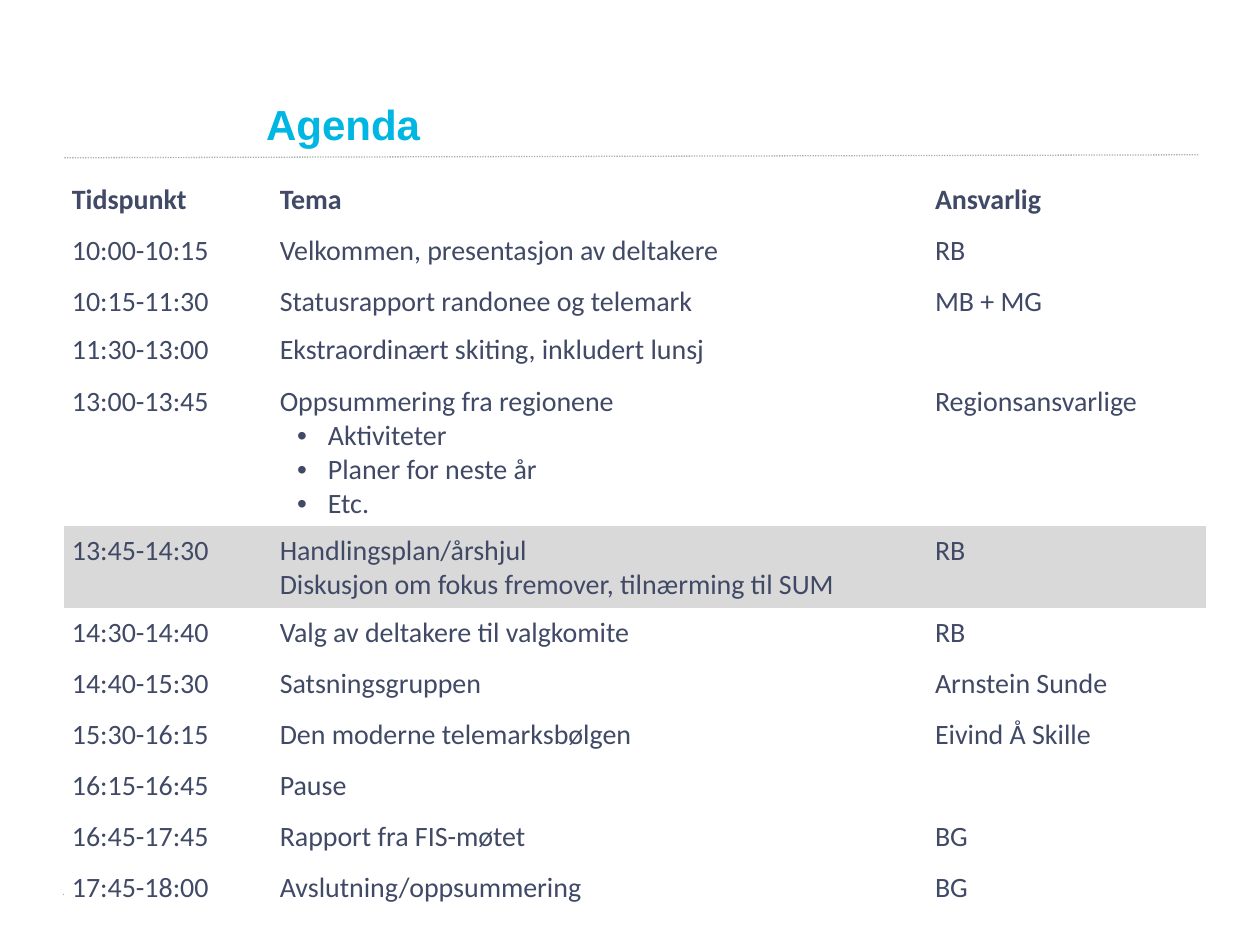
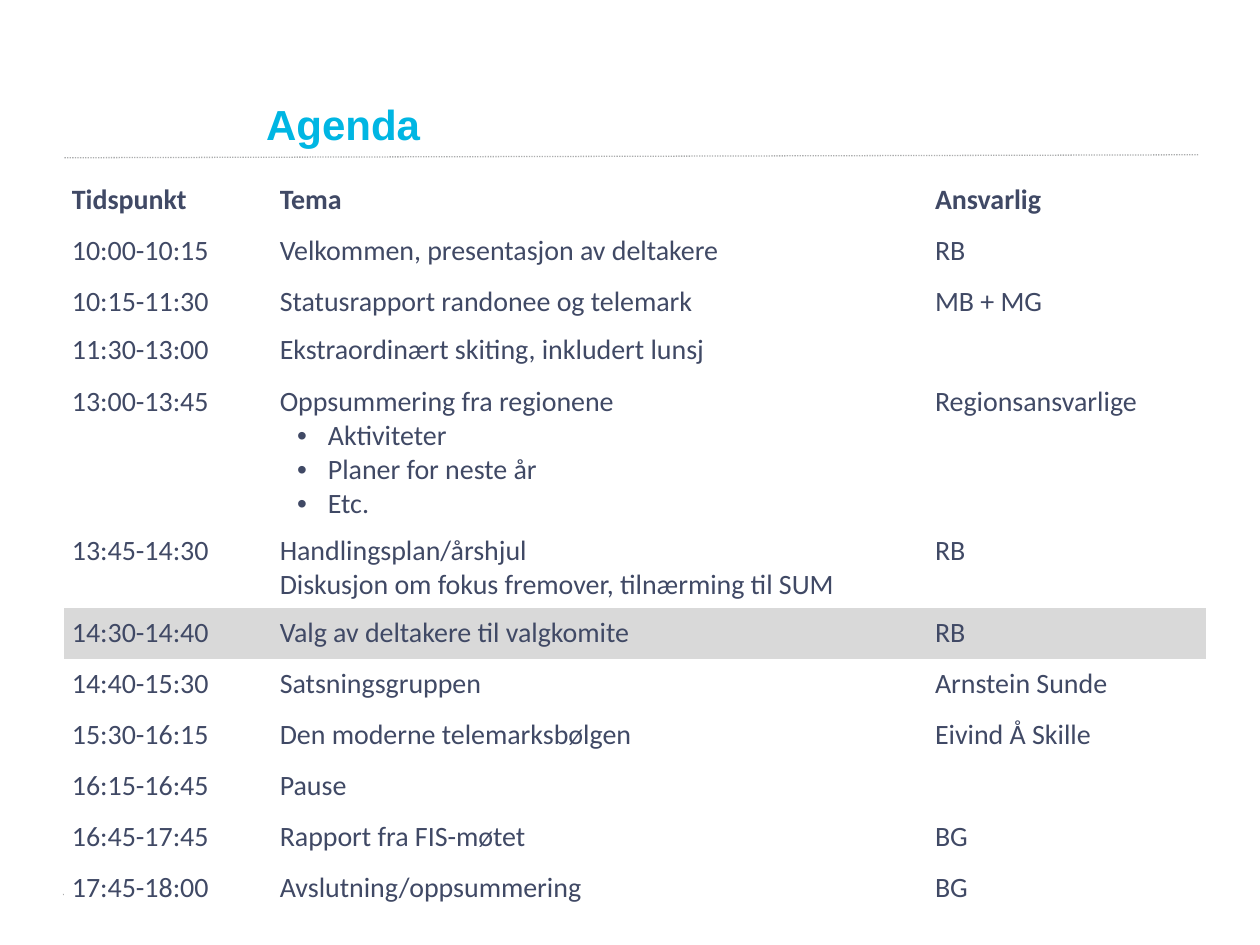
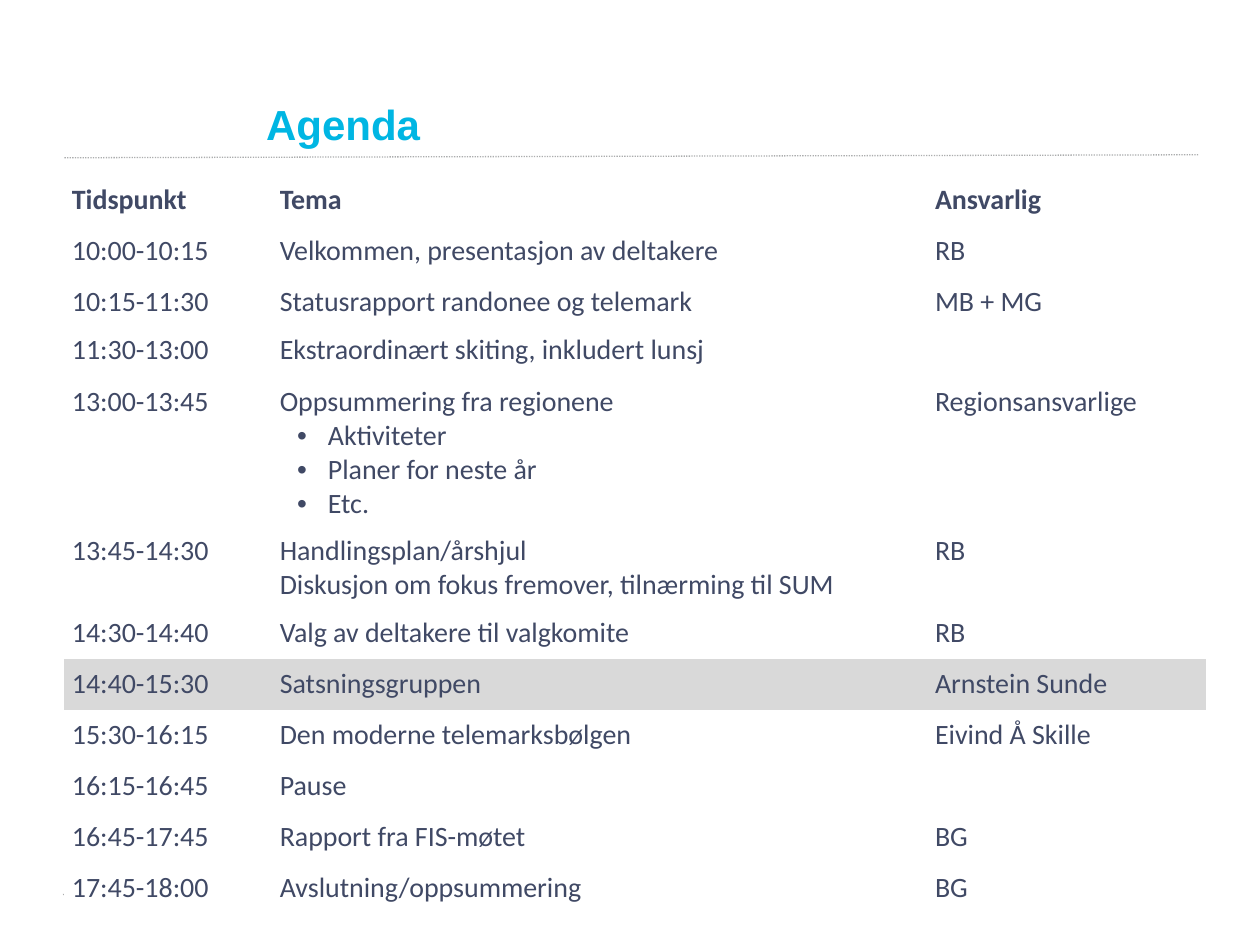
"""Build three agenda slides, each highlighting one item of the day."""
from lxml.etree import SubElement
from pptx import Presentation
from pptx.dml.color import RGBColor
from pptx.enum.dml import MSO_LINE
from pptx.enum.shapes import MSO_CONNECTOR
from pptx.enum.text import MSO_ANCHOR, MSO_AUTO_SIZE, PP_ALIGN
from pptx.oxml.ns import qn
from pptx.util import Cm, Pt

COLORS = {
    "title": "00B6E3",
    "text": "404965",
    "rule": "ACADAE",
    "plain": "FFFFFF",
    "highlight": "D9D9D9",
}
TITLE = "Agenda"
HEADER = ("Tidspunkt", ["Tema"], "Ansvarlig")
REGION_POINTS = ["Aktiviteter", "Planer for neste år", "Etc."]
ITEMS = [
    ("10:00-10:15", ["Velkommen, presentasjon av deltakere"], "RB"),
    ("10:15-11:30", ["Statusrapport randonee og telemark"], "MB + MG"),
    ("11:30-13:00", ["Ekstraordinært skiting, inkludert lunsj"], ""),
    ("13:00-13:45", ["Oppsummering fra regionene", *REGION_POINTS], "Regionsansvarlige"),
    ("13:45-14:30", ["Handlingsplan/årshjul",
                     "Diskusjon om fokus fremover, tilnærming til SUM"], "RB"),
    ("14:30-14:40", ["Valg av deltakere til valgkomite"], "RB"),
    ("14:40-15:30", ["Satsningsgruppen"], "Arnstein Sunde"),
    ("15:30-16:15", ["Den moderne telemarksbølgen"], "Eivind Å Skille"),
    ("16:15-16:45", ["Pause"], ""),
    ("16:45-17:45", ["Rapport fra FIS-møtet"], "BG"),
    ("17:45-18:00", ["Avslutning/oppsummering"], "BG"),
]
HIGHLIGHTED_TIMES = ["13:45-14:30", "14:30-14:40", "14:40-15:30"]

RULES = [(1.27, 18.03, 24.31, 17.93), (1.3, 3.18, 24.16, 3.12)]
TITLE_BOX = (5.11, 1.85, 18.39, 1.27)
TABLE_LEFT, TABLE_TOP = 1.3, 3.53
COLUMN_WIDTHS = (4.19, 13.21, 5.61)
ROW_HEIGHT, TIGHT_ROW_HEIGHT, TIGHT_ROW = 1.03, 0.53, 2
CELL_MARGIN = 0.15
NO_GRID_STYLE = "{2D5ABB26-0587-4C30-8999-92F81FD0307C}"


def color(name):
    return RGBColor.from_string(COLORS[name])


def style_font(font, name, size, color_name, bold):
    font.name, font.size, font.bold = name, Pt(size), bold
    font.color.rgb = color(color_name)


def add_rules(page):
    for ends in RULES:
        rule = page.shapes.add_connector(MSO_CONNECTOR.STRAIGHT, *map(Cm, ends))
        rule.line.color.rgb = color("rule")
        rule.line.width = Pt(0.75)
        rule.line.dash_style = MSO_LINE.ROUND_DOT
        SubElement(rule.element.spPr, qn("a:effectLst"))


def set_title(page):
    title = page.shapes.title
    title.left, title.top, title.width, title.height = map(Cm, TITLE_BOX)
    frame = title.text_frame
    frame.text = TITLE
    frame.vertical_anchor = MSO_ANCHOR.BOTTOM
    frame.auto_size = MSO_AUTO_SIZE.SHAPE_TO_FIT_TEXT
    para = frame.paragraphs[0]
    para.alignment = PP_ALIGN.LEFT
    style_font(para.runs[0].font, "Arial", 24, "title", True)


def add_bullet(para):
    properties = para._p.get_or_add_pPr()
    properties.set("marL", str(Cm(0.97)))
    properties.set("indent", str(Cm(-0.62)))
    SubElement(properties, qn("a:buFont"), typeface="Arial")
    SubElement(properties, qn("a:buChar"), char="•")


def fill_cell(cell, lines, fill_name, bold):
    cell.fill.solid()
    cell.fill.fore_color.rgb = color(fill_name)
    if not any(lines):
        return
    cell.margin_left = cell.margin_right = Cm(CELL_MARGIN)
    cell.margin_top = cell.margin_bottom = Cm(CELL_MARGIN)
    cell.text_frame.text = "\n".join(lines)
    for para in cell.text_frame.paragraphs:
        if para.text in REGION_POINTS:
            add_bullet(para)
        for span in para.runs:
            style_font(span.font, "Calibri", 16, "text", bold)


def add_agenda(page, highlighted_time):
    rows = [HEADER, *ITEMS]
    heights = [TIGHT_ROW_HEIGHT if index == TIGHT_ROW else ROW_HEIGHT
               for index in range(len(rows))]
    frame = page.shapes.add_table(
        len(rows), len(COLUMN_WIDTHS), Cm(TABLE_LEFT), Cm(TABLE_TOP),
        Cm(sum(COLUMN_WIDTHS)), Cm(sum(heights)))
    next(frame.element.iter(qn("a:tableStyleId"))).text = NO_GRID_STYLE
    table = frame.table
    table.horz_banding = False
    for column, width in zip(table.columns, COLUMN_WIDTHS):
        column.width = Cm(width)
    for row, height, (time, topic, owner) in zip(table.rows, heights, rows):
        row.height = Cm(height)
        fill_name = "highlight" if time == highlighted_time else "plain"
        for cell, lines in zip(row.cells, ([time], topic, [owner])):
            fill_cell(cell, lines, fill_name, time == HEADER[0])


def main():
    deck = Presentation()
    deck.slide_width, deck.slide_height = Cm(25.4), Cm(19.05)
    title_only = deck.slide_layouts.get_by_name("Title Only")
    for highlighted_time in HIGHLIGHTED_TIMES:
        page = deck.slides.add_slide(title_only)
        add_rules(page)
        set_title(page)
        add_agenda(page, highlighted_time)
    deck.save("out.pptx")


if __name__ == "__main__":
    main()
